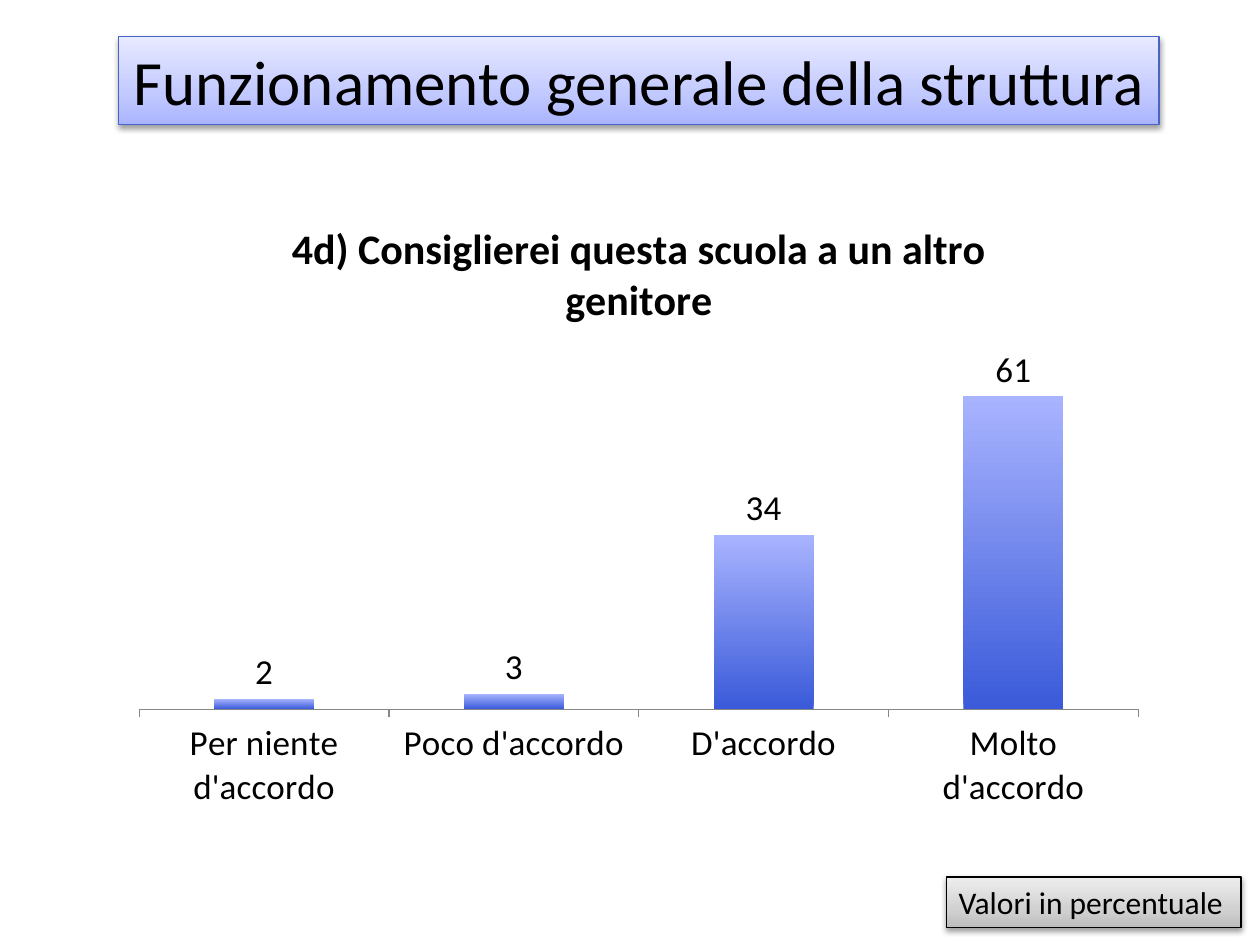
from copy import deepcopy
from dataclasses import dataclass

from lxml import etree
from pptx import Presentation
from pptx.chart.data import CategoryChartData
from pptx.dml.color import RGBColor
from pptx.enum.chart import XL_CHART_TYPE, XL_LABEL_POSITION, XL_TICK_MARK
from pptx.enum.shapes import MSO_SHAPE
from pptx.enum.text import MSO_ANCHOR, PP_ALIGN
from pptx.oxml import parse_xml
from pptx.oxml.ns import nsdecls, qn
from pptx.util import Inches, Pt

COLUMNS = XL_CHART_TYPE.COLUMN_CLUSTERED
ABOVE_BAR = XL_LABEL_POSITION.OUTSIDE_END
TICK_OUTSIDE = XL_TICK_MARK.OUTSIDE
RECTANGLE = MSO_SHAPE.RECTANGLE
MIDDLE = MSO_ANCHOR.MIDDLE
CENTER, LEFT = PP_ALIGN.CENTER, PP_ALIGN.LEFT


@dataclass(frozen=True)
class Theme:
    font: str = "Calibri"
    ink: str = "000000"
    axis: str = "868686"
    title_line: str = "4963C7"
    title_fill: tuple = ((0, "A9B4FF"), (0.35, "C2C9FF"), (1, "E8EAFF"))
    note_fill: tuple = ((0, "BDBDBD"), (0.35, "D1D1D1"), (1, "EEEEEE"))
    bar_fill: tuple = ((0, "3A5AD9"), (1, "A9B4FF"))
    title_size: int = 36
    chart_title_size: int = 24
    chart_size: int = 20
    note_size: int = 18


def paint_gradient(fill, owner, stops):
    """Fill upwards through (position, colour) stops; owner is the XML parent."""
    fill.gradient()
    fill.gradient_angle = 90
    stop_list = owner.find(".//" + qn("a:gsLst"))
    while len(stop_list) < len(stops):
        stop_list.append(deepcopy(stop_list[0]))
    for stop, (position, color) in zip(fill.gradient_stops, stops):
        stop.position = position
        stop.color.rgb = RGBColor.from_string(color)


def add_soft_shadow(shape):
    shape.shadow.inherit = False
    effects = shape.element.spPr.find(qn("a:effectLst"))
    effects.append(parse_xml(
        f'<a:outerShdw {nsdecls("a")} blurRad="40000" dist="20000" dir="5400000" '
        'rotWithShape="0"><a:srgbClr val="000000"><a:alpha val="38000"/>'
        '</a:srgbClr></a:outerShdw>'))


class SlideBuilder:
    """Draws on one page; lengths are in columns and rows of a 100 x 75 grid."""

    CELL = Inches(0.1)

    def __init__(self, deck, theme):
        self.theme = theme
        self.page = deck.slides.add_slide(deck.slide_layouts[6])

    def place(self, *lengths):
        return [round(length * self.CELL) for length in lengths]

    def style_font(self, font, size, bold=False):
        font.name = self.theme.font
        font.size = Pt(size)
        font.bold = bold
        font.color.rgb = RGBColor.from_string(self.theme.ink)

    def panel(self, area, text, size, stops, line, align, wrap=True):
        box = self.page.shapes.add_shape(RECTANGLE, *self.place(*area))
        paint_gradient(box.fill, box.element.spPr, stops)
        box.line.color.rgb = RGBColor.from_string(line)
        box.line.width = Pt(0.75)
        add_soft_shadow(box)
        frame = box.text_frame
        frame.word_wrap = wrap
        frame.vertical_anchor = MIDDLE
        para = frame.paragraphs[0]
        para.text = text
        para.alignment = align
        self.style_font(para.font, size)

    def column_chart(self, area, title, values, top, plot):
        """Chart a dict of values; plot is the inner area as shares of the chart."""
        data = CategoryChartData(number_format="0")
        data.categories = list(values)
        data.add_series("Series 1", list(values.values()))
        chart = self.page.shapes.add_chart(COLUMNS, *self.place(*area), data).chart
        self.style_font(chart.font, self.theme.chart_size)
        chart.has_legend = False
        chart.has_title = True
        heading = chart.chart_title.text_frame.paragraphs[0]
        heading.text = title
        self.style_font(heading.font, self.theme.chart_title_size, bold=True)
        chart.chart_title.include_in_layout = False

        scale = chart.value_axis
        scale.minimum_scale, scale.maximum_scale = 0, top
        scale.has_major_gridlines = False
        scale.visible = False
        axis = chart.category_axis
        axis.major_tick_mark = TICK_OUTSIDE
        axis.format.line.color.rgb = RGBColor.from_string(self.theme.axis)
        axis.format.line.width = Pt(0.75)

        bars = chart.plots[0]
        bars.gap_width = 150
        bars.vary_by_categories = False
        series = bars.series[0]
        paint_gradient(series.format.fill, series.format.fill and series._element,
                       self.theme.bar_fill)
        bars.has_data_labels = True
        labels = bars.data_labels
        labels.show_value = True
        labels.number_format = "0"
        labels.number_format_is_linked = False
        labels.position = ABOVE_BAR
        self.style_font(labels.font, self.theme.chart_size)
        self.fix_plot(chart, plot)

    @staticmethod
    def fix_plot(chart, shares):
        plot_area = chart.element.find(".//" + qn("c:plotArea"))
        layout = plot_area.find(qn("c:layout"))
        if layout is None:
            layout = etree.Element(qn("c:layout"))
            plot_area.insert(0, layout)
        manual = etree.SubElement(layout, qn("c:manualLayout"))
        settings = [("layoutTarget", "inner"), ("xMode", "edge"), ("yMode", "edge")]
        settings += zip("xywh", shares)
        for name, value in settings:
            etree.SubElement(manual, qn(f"c:{name}")).set("val", str(value))


def main():
    deck = Presentation()
    deck.slide_width, deck.slide_height = Inches(10), Inches(7.5)
    theme = Theme()
    slide = SlideBuilder(deck, theme)
    left, width = 9.4, 82.6
    slide.panel((left, 2.9, width, 7), "Funzionamento generale della struttura",
                theme.title_size, theme.title_fill, theme.title_line, CENTER)
    slide.panel((75.1, 69.6, 23.4, 4), "Valori in percentuale",
                theme.note_size, theme.note_fill, theme.ink, LEFT, wrap=False)
    slide.column_chart(
        (left, 15.3, width, 50),
        "4d) Consiglierei questa scuola a un altro genitore",
        {"Per niente d'accordo": 2, "Poco d'accordo": 3,
         "D'accordo": 34, "Molto d'accordo": 61},
        top=70, plot=(0.02, 0.25, 0.96, 0.57))
    deck.save("out.pptx")


if __name__ == "__main__":
    main()
